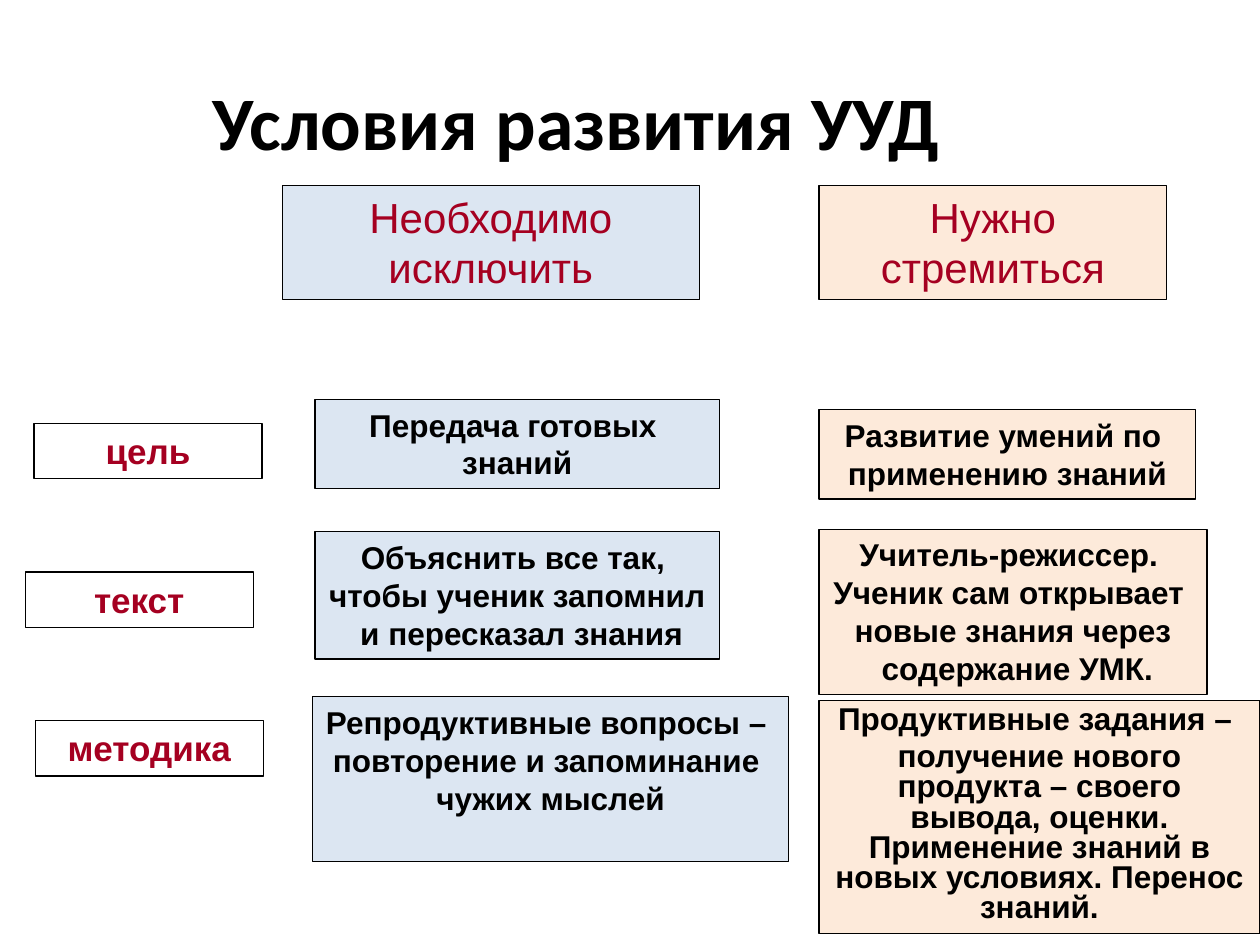
from dataclasses import dataclass

from pptx import Presentation
from pptx.dml.color import RGBColor
from pptx.enum.shapes import MSO_SHAPE
from pptx.enum.text import MSO_ANCHOR, PP_ALIGN
from pptx.util import Inches, Pt


@dataclass(frozen=True)
class TextStyle:
    size: float
    color: str
    bold: bool = True
    font: str = "Arial"


@dataclass(frozen=True)
class Theme:
    label_fill: str = "FFFFFF"
    avoid_fill: str = "DCE6F2"
    strive_fill: str = "FDEADA"
    line: str = "000000"
    line_width: float = 0.75
    title: TextStyle = TextStyle(43.2, "000000", font="Calibri")
    heading: TextStyle = TextStyle(24, "A50021", bold=False)
    label: TextStyle = TextStyle(20, "A50021")
    body: TextStyle = TextStyle(18, "000000")


@dataclass(frozen=True)
class Card:
    left: float
    top: float
    width: float
    height: float
    fill: str
    style: TextStyle
    lines: tuple[str, ...]
    wrap: bool = True
    line_spacing: float = 1.0
    space_before: float = 0


THEME = Theme()
LABEL_SIZE = (1.81, 0.44)
STRIVE_LEFT = 6.5

LABELS = [
    Card(left, top, *LABEL_SIZE, THEME.label_fill, THEME.label, (word,))
    for left, top, word in (
        (0.27, 3.36, "цель"),
        (0.2, 4.54, "текст"),
        (0.28, 5.72, "методика"),
    )
]

AVOID = [
    Card(2.24, 1.47, 3.31, 0.91, THEME.avoid_fill, THEME.heading,
         ("Необходимо исключить",)),
    Card(2.5, 3.17, 3.21, 0.71, THEME.avoid_fill, THEME.body,
         ("Передача готовых ", "знаний")),
    Card(2.5, 4.22, 3.21, 1.01, THEME.avoid_fill, THEME.body,
         ("Объяснить все так, ", "чтобы ученик запомнил",
          " и пересказал знания"), wrap=False),
    Card(2.48, 5.53, 3.78, 1.31, THEME.avoid_fill, THEME.body,
         ("Репродуктивные вопросы – ", "повторение и запоминание ",
          "чужих мыслей")),
]

STRIVE = [
    Card(STRIVE_LEFT, 1.47, 2.76, 0.91, THEME.strive_fill, THEME.heading,
         ("Нужно стремиться",)),
    Card(STRIVE_LEFT, 3.25, 2.99, 0.71, THEME.strive_fill, THEME.body,
         ("Развитие умений по ", "применению знаний")),
    Card(STRIVE_LEFT, 4.2, 3.08, 1.31, THEME.strive_fill, THEME.body,
         ("Учитель-режиссер. ", "Ученик сам открывает ",
          "новые знания через", " содержание УМК."), wrap=False),
    Card(STRIVE_LEFT, 5.56, 3.5, 1.85, THEME.strive_fill, THEME.body,
         ("Продуктивные задания – ",
          "получение нового продукта – своего вывода, оценки. "
          "Применение знаний в новых условиях. Перенос знаний."),
         line_spacing=0.8, space_before=3.6),
]


def set_all(target: object, values: dict) -> None:
    for name, value in values.items():
        setattr(target, name, value)


def write_lines(frame, lines: tuple[str, ...], style: TextStyle,
                paragraph_format: dict) -> None:
    for index, line in enumerate(lines):
        para = frame.add_paragraph() if index else frame.paragraphs[0]
        set_all(para, {"alignment": PP_ALIGN.CENTER, **paragraph_format})
        span = para.add_run()
        span.text = line
        set_all(span.font, {"name": style.font, "size": Pt(style.size),
                            "bold": style.bold})
        span.font.color.rgb = RGBColor.from_string(style.color)


def draw_title(page, text: str) -> None:
    box = page.shapes.add_textbox(Inches(0.5), Inches(0.13),
                                  Inches(8.28), Inches(1.65))
    set_all(box.text_frame, {"word_wrap": True,
                             "vertical_anchor": MSO_ANCHOR.MIDDLE})
    write_lines(box.text_frame, (text,), THEME.title, {})


def draw_card(page, card: Card) -> None:
    box = page.shapes.add_shape(
        MSO_SHAPE.RECTANGLE, Inches(card.left), Inches(card.top),
        Inches(card.width), Inches(card.height))
    box.shadow.inherit = False
    box.fill.solid()
    box.fill.fore_color.rgb = RGBColor.from_string(card.fill)
    box.line.color.rgb = RGBColor.from_string(THEME.line)
    box.line.width = Pt(THEME.line_width)
    set_all(box.text_frame, {"word_wrap": card.wrap,
                             "vertical_anchor": MSO_ANCHOR.TOP})
    write_lines(box.text_frame, card.lines, card.style,
                {"line_spacing": card.line_spacing,
                 "space_before": Pt(card.space_before)})


def main() -> None:
    deck = Presentation()
    set_all(deck, {"slide_width": Inches(10), "slide_height": Inches(7.5)})
    page = deck.slides.add_slide(deck.slide_layouts[6])

    # Title
    draw_title(page, "Условия развития УУД ")

    # Row labels, then the two columns
    for card in LABELS + AVOID + STRIVE:
        draw_card(page, card)

    deck.save("out.pptx")


if __name__ == "__main__":
    main()
